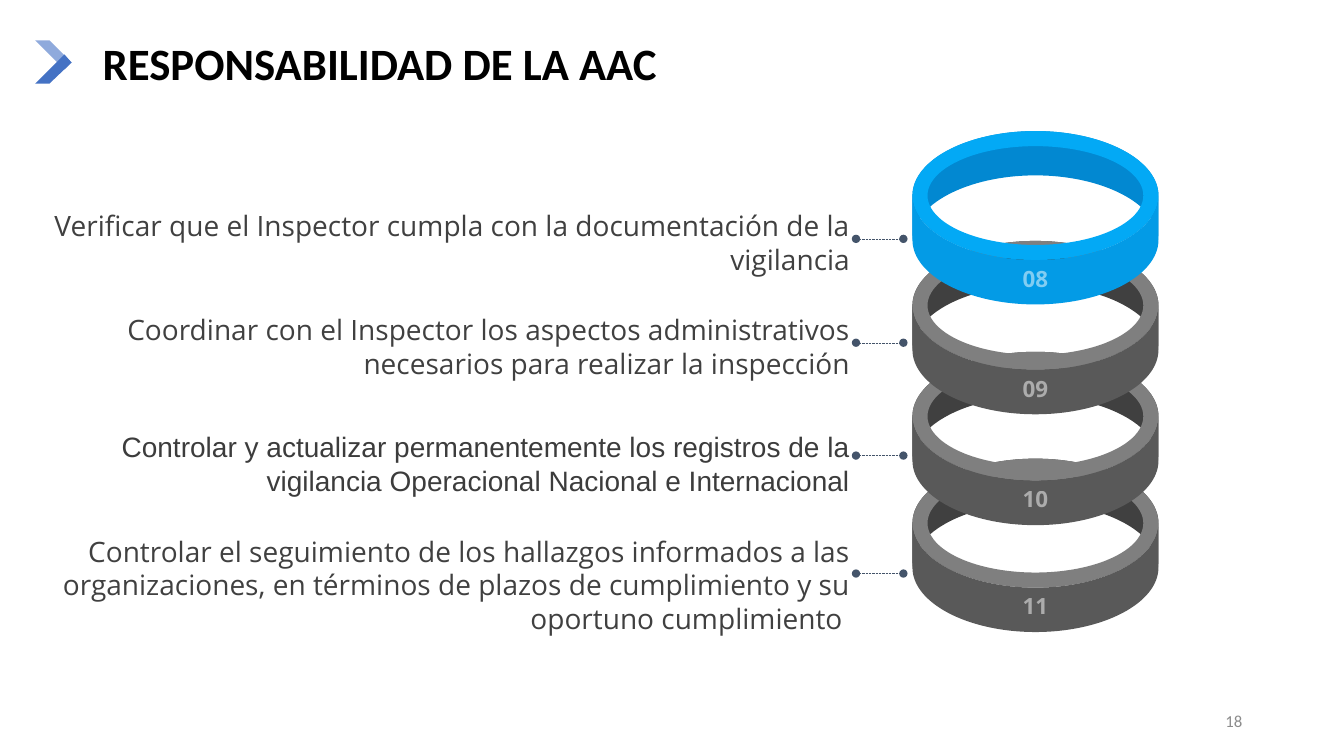
from lxml.etree import SubElement
from pptx import Presentation
from pptx.dml.color import RGBColor
from pptx.enum.dml import MSO_LINE
from pptx.enum.shapes import MSO_CONNECTOR, MSO_SHAPE
from pptx.enum.text import MSO_ANCHOR, PP_ALIGN
from pptx.oxml.ns import qn
from pptx.util import Inches, Pt

TITLE = "RESPONSABILIDAD DE LA AAC"
PAGE = "18"
GRAY = {"back": "404040", "rim": "7F7F7F", "front": "595959"}
BLUE = {"back": "0288D1", "rim": "03A9F5", "front": "039BE6"}
OPEN = {"name": "Open Sans", "color": "404040"}
ARIAL = {"name": "Arial", "color": "3C3C3C"}

# number, duty, font, text top, text height, link height, ring centre, ring colours
DUTIES = [
    ("08", "Verificar que el Inspector cumpla con la documentación de la vigilancia",
     OPEN, 2.01, 0.79, 2.37, 1.94, BLUE),
    ("09", "Coordinar con el Inspector los aspectos administrativos necesarios "
     "para realizar la inspección",
     OPEN, 3.04, 0.79, 3.4, 3.03, GRAY),
    ("10", "Controlar y actualizar permanentemente los registros de la vigilancia "
     "Operacional Nacional e Internacional",
     ARIAL, 4.2, 0.79, 4.52, 4.13, GRAY),
    ("11", "Controlar el seguimiento de los hallazgos informados a las organizaciones, "
     "en términos de plazos de cumplimiento y su oportuno cumplimiento ",
     OPEN, 5.24, 1.12, 5.69, 5.19, GRAY),
]
CHEVRON = [
    ("8FAADC", [(0.35, 0.4), (0.64, 0.69), (0.71, 0.62), (0.49, 0.4)]),
    ("4472C4", [(0.35, 0.83), (0.64, 0.54), (0.71, 0.62), (0.49, 0.83)]),
]

RING_X, RING_DEPTH, RIM = 10.27, 0.44, 0.15
RADIUS_X, RADIUS_Y = 1.22, 0.64
CURVE = 0.55  # handle length of a quarter ellipse, as a share of its radius
DUTY_LEFT, DUTY_RIGHT = 0.42, 8.49
LINK_START, LINK_END = 8.96, 8.49

deck = Presentation()
deck.slide_width, deck.slide_height = Inches(13.33), Inches(7.5)
slide = deck.slides.add_slide(deck.slide_layouts[6])


def rgb(value):
    return RGBColor.from_string(value)


def paint(shape, color):
    shape.shadow.inherit = False
    shape.fill.solid()
    shape.fill.fore_color.rgb = rgb(color)
    shape.line.fill.background()


def add_text(text, box, name, size, color, bold=False, align=PP_ALIGN.LEFT,
             alpha=None, spacing=None, **frame_format):
    frame = slide.shapes.add_textbox(*map(Inches, box)).text_frame
    frame.word_wrap = True
    for key, value in frame_format.items():
        setattr(frame, key, value)
    paragraph = frame.paragraphs[0]
    paragraph.alignment = align
    paragraph.line_spacing = spacing
    run = paragraph.add_run()
    run.text = text
    for key, value in {"name": name, "size": Pt(size), "bold": bold}.items():
        setattr(run.font, key, value)
    run.font.color.rgb = rgb(color)
    if alpha:
        tint = next(run._r.iter(qn("a:srgbClr")))
        SubElement(tint, qn("a:alpha"), val=str(alpha * 1000))


def add_outline(color, corners):
    start, *others = [(Inches(x), Inches(y)) for x, y in corners]
    builder = slide.shapes.build_freeform(*start, scale=1.0)
    builder.add_line_segments(others, close=True)
    shape = builder.convert_to_shape()
    paint(shape, color)
    return shape


def half_ellipse(center_y, side):
    """Curve points from left to right; side is -1 for the upper half, 1 for the lower."""
    shares = [(-1, 0), (-1, CURVE), (-CURVE, 1), (0, 1), (CURVE, 1), (1, CURVE), (1, 0)]
    return [(RING_X + RADIUS_X * x, center_y + side * RADIUS_Y * y) for x, y in shares]


def add_band(color, center_y, side):
    near = half_ellipse(center_y, side)
    far = half_ellipse(center_y + RING_DEPTH, side)[::-1]
    band = add_outline(color, near + far)
    steps = list(band._element.iter(qn("a:lnTo")))
    for first in (0, 3, 7, 10):
        curve, *handles = steps[first:first + 3]
        curve.tag = qn("a:cubicBezTo")
        for handle in handles:
            curve.append(handle[0])
            handle.getparent().remove(handle)


def add_ring(number, center_y, colors):
    left, width, height = RING_X - RADIUS_X, 2 * RADIUS_X, 2 * RADIUS_Y
    add_band(colors["back"], center_y, -1)
    rim = slide.shapes.add_shape(
        MSO_SHAPE.DONUT, *map(Inches, (left, center_y - RADIUS_Y, width, height)))
    rim.adjustments[0] = RIM / height
    paint(rim, colors["rim"])
    add_band(colors["front"], center_y, 1)
    add_text(number, (left, center_y + 0.61, width, 0.42),
             "Open Sans", 16, "FFFFFF", True, PP_ALIGN.CENTER, alpha=50,
             vertical_anchor=MSO_ANCHOR.MIDDLE, margin_left=0, margin_right=0,
             margin_top=0, margin_bottom=0)


def add_link(y):
    link = slide.shapes.add_connector(
        MSO_CONNECTOR.STRAIGHT, *map(Inches, (LINK_START, y, LINK_END, y)))
    link.line.color.rgb = rgb("44546A")
    link.line.width = Pt(0.25)
    link.line.dash_style = MSO_LINE.SQUARE_DOT
    properties = link._element.spPr
    for end in ("a:headEnd", "a:tailEnd"):
        SubElement(properties.find(qn("a:ln")), qn(end), type="oval")
    SubElement(properties, qn("a:effectLst"))


for color, corners in CHEVRON:
    add_outline(color, corners)
add_text(TITLE, (0.92, 0.02, 11.5, 1.26), "Calibri", 32, "000000", True,
         spacing=0.9, vertical_anchor=MSO_ANCHOR.MIDDLE)
add_text(PAGE, (9.42, 6.95, 3, 0.4), "Calibri", 12, "8C8C8C",
         align=PP_ALIGN.RIGHT, vertical_anchor=MSO_ANCHOR.MIDDLE)

inset = Inches(0.06)
for _, duty, font, top, height, link_y, _, _ in DUTIES:
    add_text(duty, (DUTY_LEFT, top, DUTY_RIGHT - DUTY_LEFT, height), size=20,
             align=PP_ALIGN.RIGHT, margin_left=inset, margin_right=inset,
             margin_top=inset, margin_bottom=inset, **font)
    add_link(link_y)

for number, *_, center_y, colors in reversed(DUTIES):
    add_ring(number, center_y, colors)

deck.save("out.pptx")
